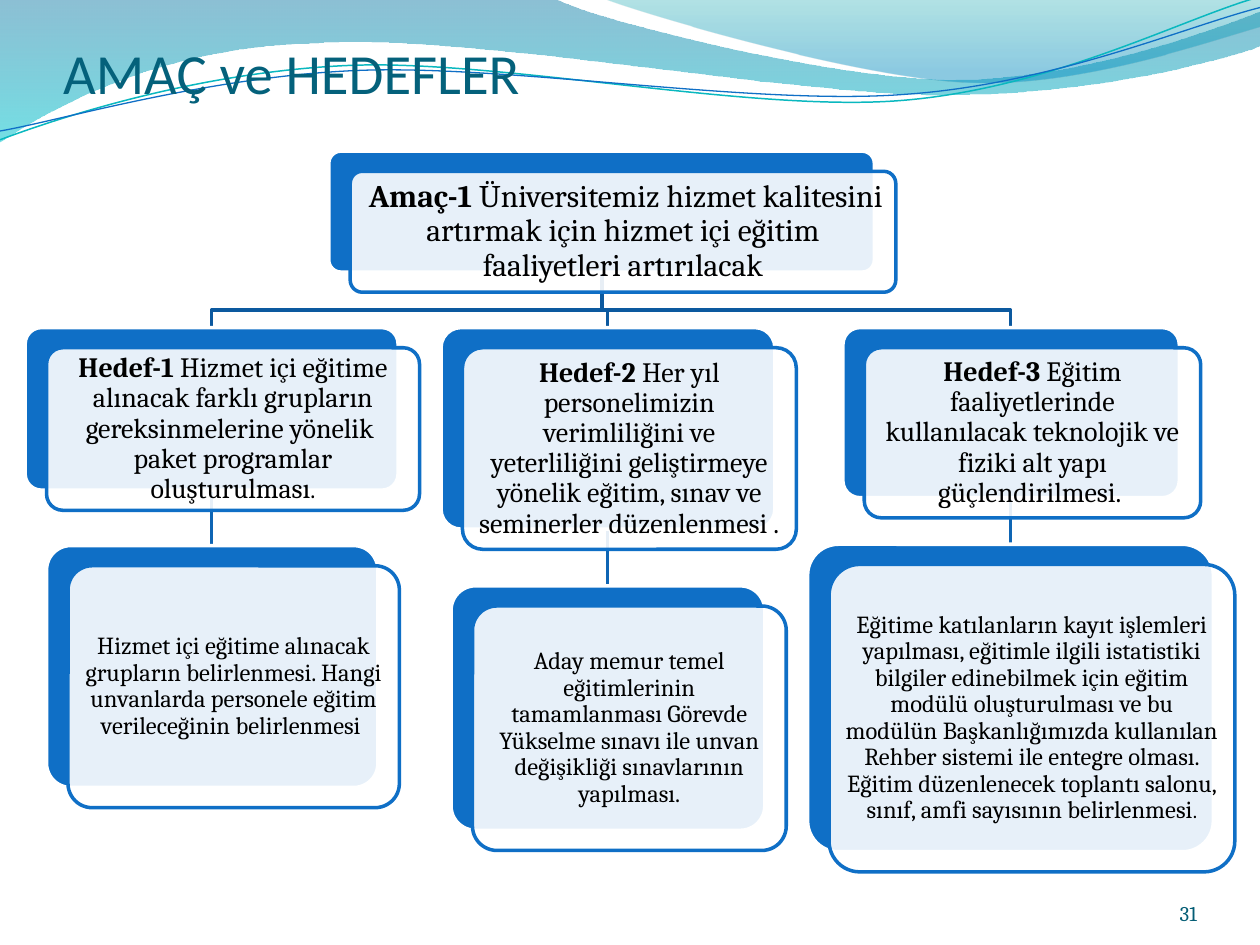
from lxml.etree import SubElement as Sub
from pptx import Presentation
from pptx.dml.color import RGBColor
from pptx.enum.shapes import MSO_SHAPE as Kind
from pptx.enum.text import MSO_ANCHOR as Anchor, MSO_AUTO_SIZE as Auto, PP_ALIGN as Align
from pptx.oxml.ns import qn
from pptx.util import Inches, Pt


def paint(color, tone, alpha=100):
    color.rgb = RGBColor.from_string(tone)
    if alpha < 100:
        Sub(color._xFill[0], qn("a:alpha"), val=str(alpha * 1000))


def write(shape, *runs, font="Cambria", tone="000000", align=Align.CENTER,
          anchor=Anchor.MIDDLE, inset=(0, 0, 0, 0), space=1.0):
    frame = shape.text_frame
    frame.word_wrap = True
    frame.auto_size = Auto.NONE
    frame.vertical_anchor = anchor
    (frame.margin_left, frame.margin_top,
     frame.margin_right, frame.margin_bottom) = map(Inches, inset)
    para = frame.paragraphs[0]
    para.alignment = align
    para.line_spacing = space
    for text, size, bold in runs:
        run = para.add_run()
        run.text = text
        run.font.size = Pt(size)
        run.font.name = font
        run.font.bold = bold
        paint(run.font.color, tone)


deck = Presentation()
deck.slide_width, deck.slide_height = Inches(10), Inches(7.5)
slide = deck.slides.add_slide(deck.slide_layouts[5])
shapes = slide.shapes

BLUE, WHITE = "0F6FC6", "FFFFFF"

waves = [
    ((0, 0),
     [[(4.4, -0.01)],
      [(4.76, 0.17), (6.64, 0.63), (7.58, 0.63)],
      [(8.53, 0.63), (9.58, 0.26), (10, 0.09)],
      [(10.01, 0.36)],
      [(9.83, 0.44), (8.7, 0.76), (7.46, 0.75)],
      [(6.22, 0.75), (3.82, 0.28), (2.57, 0.34)],
      [(1.29, 0.36), (0.46, 0.83), (-0.01, 1.13)]],
     [(0, "0074A1", 45), (1, "00C6CF", 55)], None),
    ((4.79, -0.01),
     [[(5.09, 0.11), (6.82, 0.62), (7.69, 0.65)],
      [(8.56, 0.69), (9.61, 0.32), (10, 0.21)],
      [(10, 0)]],
     [(0, "00A1A9", 30), (0.8, "008BBF", 45)], None),
    ((0, 1.11),
     [[(0.48, 0.93), (1.58, 0.57), (2.77, 0.52)],
      [(3.95, 0.47), (5.93, 0.89), (7.13, 0.8)],
      [(8.33, 0.71), (9.38, 0.15), (9.98, -0.02)]],
     None, ("0AB8BF", 0.85)),
    ((0, 1.04),
     [[(0.47, 0.96), (1.64, 0.61), (2.83, 0.56)],
      [(4.03, 0.51), (5.97, 0.84), (7.17, 0.75)],
      [(8.36, 0.67), (9.41, 0.21), (10, 0.06)]],
     None, (BLUE, 0.75)),
]

trunk, root, bend, top = 4.78, 2.16, 2.46, 2.6
links = []
for x, low, end in [(8.02, 3.95, 4.32), (4.82, 4.2, 4.65), (1.68, 3.89, 4.33)]:
    links.append(((x, low), [[(x, end)]], None, ("0E65B4", 2)))
    links.append(((trunk, root), [[(trunk, bend)], [(x, bend)], [(x, top)]],
                  None, ("0C599F", 2)))

for start, parts, stops, line in waves + links:
    spots = [(Inches(x), Inches(y)) for part in parts for x, y in part]
    pen = shapes.build_freeform(*map(Inches, start))
    pen.add_line_segments(spots, close=bool(stops))
    form = pen.convert_to_shape()
    form.shadow.inherit = False

    moves = form._element.findall(".//" + qn("a:lnTo"))
    for part in parts:
        group, moves = moves[:len(part)], moves[len(part):]
        if len(part) == 3:
            curve = group[0]
            bezier = curve.makeelement(qn("a:cubicBezTo"))
            curve.addprevious(bezier)
            for move in group:
                bezier.append(move[0])
                move.getparent().remove(move)

    if stops:
        form.line.fill.background()
        form.fill.gradient()
        form.fill.gradient_angle = 270
        for stop, (place, tone, alpha) in zip(form.fill.gradient_stops, stops):
            stop.position = place
            paint(stop.color, tone, alpha)
    else:
        form.fill.background()
        paint(form.line.color, line[0])
        form.line.width = Pt(line[1])

title = shapes.title
title.left, title.top, title.width, title.height = map(Inches, (0.5, 0.29, 9, 0.55))
write(title, ("AMAÇ ve HEDEFLER", 32.4, False), font="Calibri", tone="04617B",
      align=Align.LEFT, anchor=Anchor.BOTTOM, inset=(0, 0.05, 0, 0))
shapes._spTree.append(title._element)

page = shapes.add_textbox(*map(Inches, (8.67, 6.95, 0.83, 0.4)))
write(page, ("31", 12, False), tone="045D75", align=Align.RIGHT, anchor=Anchor.BOTTOM)

cards = [
    (2.61, 1.2, 4.33, 0.96, 0.06, [
        (" ", 14, True), ("Amaç-1 ", 18, True),
        ("Üniversitemiz hizmet kalitesini artırmak için hizmet içi eğitim "
         "faaliyetleri artırılacak", 18, False)]),
    (0.2, top, 2.96, 1.29, 0.07, [
        ("Hedef-1 ", 16, True),
        ("Hizmet içi eğitime alınacak farklı grupların gereksinmelerine yönelik  "
         "paket programlar oluşturulması", 16, False), (".", 14, False)]),
    (0.37, 4.33, 2.63, 1.92, 0.06, [
        ("Hizmet içi eğitime alınacak grupların belirlenmesi. Hangi unvanlarda "
         "personele eğitim verileceğinin belirlenmesi ", 14, False)]),
    (3.5, top, 2.65, 1.6, 0.07, [
        ("Hedef-2 ", 16, True),
        ("Her yıl personelimizin verimliliğini ve yeterliliğini geliştirmeye yönelik "
         "eğitim, sınav ve seminerler düzenlenmesi .", 16, False)]),
    (3.58, 4.65, 2.49, 1.94, 0.06, [
        ("Aday memur temel eğitimlerinin tamamlanması Görevde Yükselme sınavı ile "
         "unvan değişikliği sınavlarının yapılması.", 14, False)]),
    (6.69, top, 2.67, 1.35, 0.07, [
        ("Hedef-3 ", 16, True),
        ("Eğitim faaliyetlerinde kullanılacak teknolojik ve fiziki alt yapı "
         "güçlendirilmesi. ", 16, False)]),
    (6.41, 4.32, 3.22, 2.44, 0.06, [
        ("Eğitime katılanların kayıt işlemleri yapılması, eğitimle ilgili istatistiki "
         "bilgiler edinebilmek için eğitim modülü oluşturulması ve bu modülün "
         "Başkanlığımızda kullanılan Rehber sistemi ile entegre olması. Eğitim "
         "düzenlenecek toplantı salonu, sınıf, amfi sayısının belirlenmesi", 14, False),
        (".", 12, False)]),
]
for x, y, w, h, pad, runs in cards:
    for dx, dy, tone, alpha, edge in [(0, 0, BLUE, 100, WHITE), (0.17, 0.16, WHITE, 90, BLUE)]:
        card = shapes.add_shape(Kind.ROUNDED_RECTANGLE,
                                *map(Inches, (x + dx, y + dy, w, h)))
        card.adjustments[0] = 0.1
        card.shadow.inherit = False
        card.fill.solid()
        paint(card.fill.fore_color, tone, alpha)
        paint(card.line.color, edge)
        card.line.width = Pt(2)
    write(card, *runs, inset=[pad] * 4, space=0.9)

deck.save("out.pptx")
